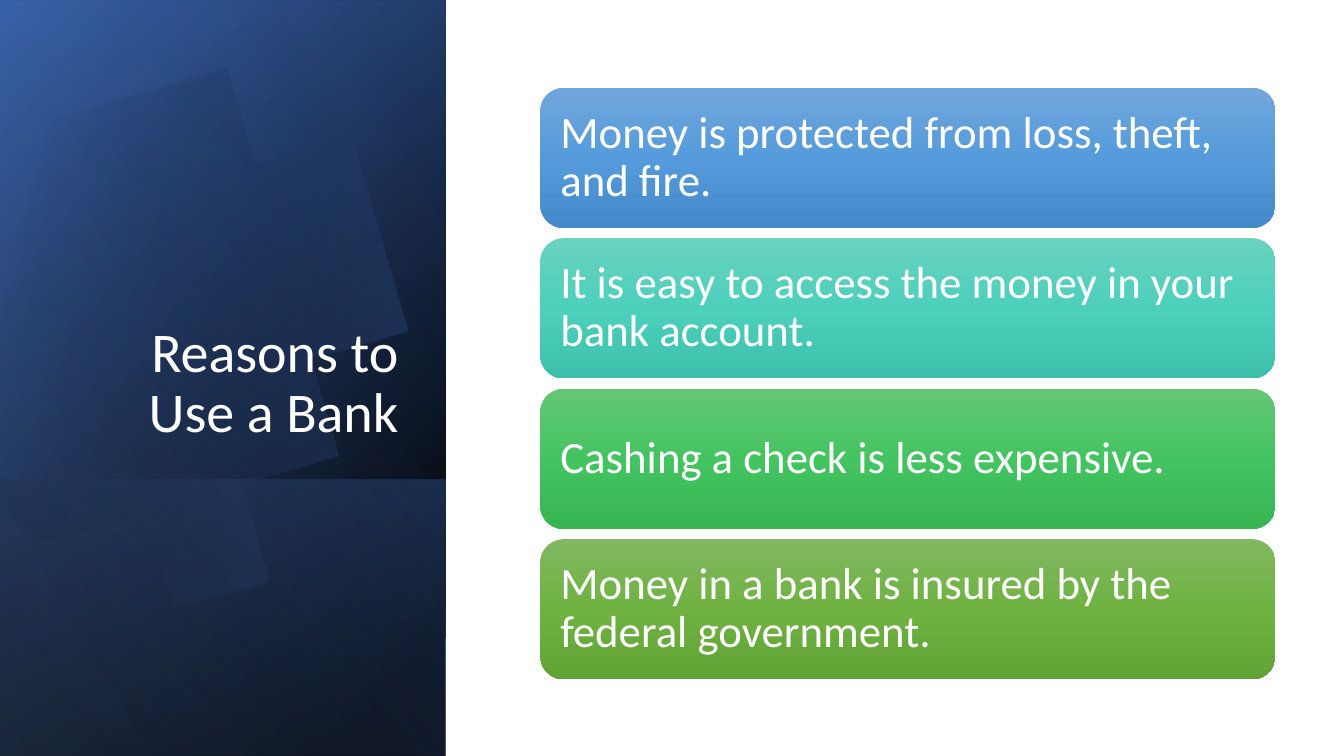
"""Build a slide listing reasons to use a bank beside a dark title panel."""
from math import cos, radians, sin

from lxml import etree
from pptx import Presentation
from pptx.dml.color import RGBColor
from pptx.enum import shapes, text
from pptx.oxml import ns
from pptx.util import Inches, Pt

HUES = {
    "white": "FFFFFF", "black": "000000", "navy": "2F5597",
    "blue": "4472C4", "pale": "8FAADC",
}
PANELS = [
    ((-1.54, 1.54, 7.5, 4.42), 50, [(8, "black", 100), (100, "navy", 100)]),
    ((-1.54, 1.55, 7.5, 4.42), 30, [(0, "black", 0), (99, "blue", 46)]),
    ((0.84, 3.92, 2.74, 4.42), 130, [(2, "blue", 29), (100, "black", 30)]),
]
GLOW = ((-1.54, 1.54, 7.5, 4.42), 120, [(0, "black", 0), (99, "pale", 11)])
DISC = [
    [(1.49, 1.1), (2.46, 1.12), (3.35, 1.77), (3.63, 2.75)],
    [(3.63, 2.75), (3.98, 3.97), (3.28, 5.23), (2.07, 5.58)],
    [(2.07, 5.58), (1.31, 5.8), (0.53, 5.61), (-0.03, 5.14)],
    [(-0.15, 5.03)],
    [(-0.15, 1.75)],
    [(0, 1.61), (0.23, 1.42), (0.5, 1.28), (0.8, 1.19)],
    [(0.8, 1.19), (1.03, 1.13), (1.26, 1.1), (1.49, 1.1)],
]
MID, TURN = (1.58, 3.34), 343.9
CARDS = [
    ("Money is protected from loss, theft, and fire.",
     ("71A6DB", "559BDB", "448ACA")),
    ("It is easy to access the money in your bank account.",
     ("6AD1C0", "4CD0BC", "3CC0AC")),
    ("Cashing a check is less expensive.",
     ("64C677", "44C460", "36B552")),
    ("Money in a bank is insured by the federal government.",
     ("81B861", "6FB242", "62A336")),
]


def shade(shape, angle, stops):
    """Give a shape a linear gradient and no line or shadow."""
    shape.shadow.inherit = False
    shape.line.fill.background()
    shape.fill.gradient()
    grad = shape._element.spPr.find(ns.qn("a:gradFill"))
    grad.find(ns.qn("a:lin")).set("ang", str(angle * 60000))
    marks = grad.find(ns.qn("a:gsLst"))
    for mark in list(marks):
        marks.remove(mark)
    for place, hue, alpha in stops:
        mark = etree.SubElement(marks, ns.qn("a:gs"), pos=str(place * 1000))
        tint = etree.SubElement(mark, ns.qn("a:srgbClr"), val=HUES.get(hue, hue))
        if alpha < 100:
            etree.SubElement(tint, ns.qn("a:alpha"), val=str(alpha * 1000))


def write(shape, words, size, inset, align, anchor):
    """Set white wrapped text in a shape."""
    frame = shape.text_frame
    look = {"word_wrap": True, "vertical_anchor": anchor}
    look.update({f"margin_{side}": Inches(gap) for side, gap in inset.items()})
    line = frame.paragraphs[0]
    run = line.add_run()
    run.text = words
    jobs = [
        (frame, look),
        (line, {"alignment": align, "line_spacing": 0.9}),
        (run.font, {"size": Pt(size), "name": "Calibri"}),
    ]
    for item, values in jobs:
        for name, value in values.items():
            setattr(item, name, value)
    run.font.color.rgb = RGBColor.from_string(HUES["white"])


def panel(slide, box, angle, stops):
    """Add a turned and mirrored gradient rectangle."""
    kind = shapes.MSO_SHAPE.RECTANGLE
    shape = slide.shapes.add_shape(kind, *map(Inches, box))
    shape.rotation = 90
    shape._element.spPr.xfrm.set("flipH", "1")
    shade(shape, angle, stops)


def trace(curve, steps=24):
    """Return points along a cubic curve, or a lone point as it is."""
    if len(curve) == 1:
        return curve
    dots = []
    for step in range(steps + 1):
        t = step / steps
        parts = ((1 - t) ** 3, 3 * t * (1 - t) ** 2, 3 * t * t * (1 - t), t ** 3)
        dots.append(tuple(sum(p * w for p, w in zip(axis, parts))
                          for axis in zip(*curve)))
    return dots


def spin(dot, angle):
    """Turn a point about the middle of the disc."""
    x, y = dot[0] - MID[0], dot[1] - MID[1]
    c, s = cos(radians(angle)), sin(radians(angle))
    return MID[0] + x * c - y * s, MID[1] + x * s + y * c


def disc(slide):
    """Add the clipped translucent disc."""
    dots = [spin(dot, -TURN) for curve in DISC for dot in trace(curve)]
    pen = slide.shapes.build_freeform(*dots[0], scale=Inches(1))
    pen.add_line_segments(dots[1:], close=True)
    shape = pen.convert_to_shape()
    shape.rotation = TURN
    shade(shape, 30, [(29, "black", 0), (100, "blue", 43)])


def title(slide):
    """Add the slide title."""
    box = slide.shapes.add_textbox(*map(Inches, (0.64, 1.84, 3.41, 2.62)))
    write(box, "Reasons to Use a Bank", 40, {},
          text.PP_ALIGN.RIGHT, text.MSO_ANCHOR.BOTTOM)


def card(slide, top, words, hues):
    """Add a rounded card with one reason."""
    kind = shapes.MSO_SHAPE.ROUNDED_RECTANGLE
    shape = slide.shapes.add_shape(kind, *map(Inches, (5.36, top, 7.29, 1.39)))
    shade(shape, 90, [(i * 50, hue, 100) for i, hue in enumerate(hues)])
    inset = dict.fromkeys(("left", "top", "right", "bottom"), 0.13)
    write(shape, words, 32, inset, text.PP_ALIGN.LEFT, text.MSO_ANCHOR.MIDDLE)


def main():
    """Build and save the slide."""
    deck = Presentation()
    deck.slide_width, deck.slide_height = Inches(13.33), Inches(7.5)
    slide = deck.slides.add_slide(deck.slide_layouts[6])
    for spec_row in PANELS:
        panel(slide, *spec_row)
    disc(slide)
    panel(slide, *GLOW)
    title(slide)
    for row, (words, hues) in enumerate(CARDS):
        card(slide, 0.87 + row * 1.493, words, hues)
    deck.save("out.pptx")


if __name__ == "__main__":
    main()
